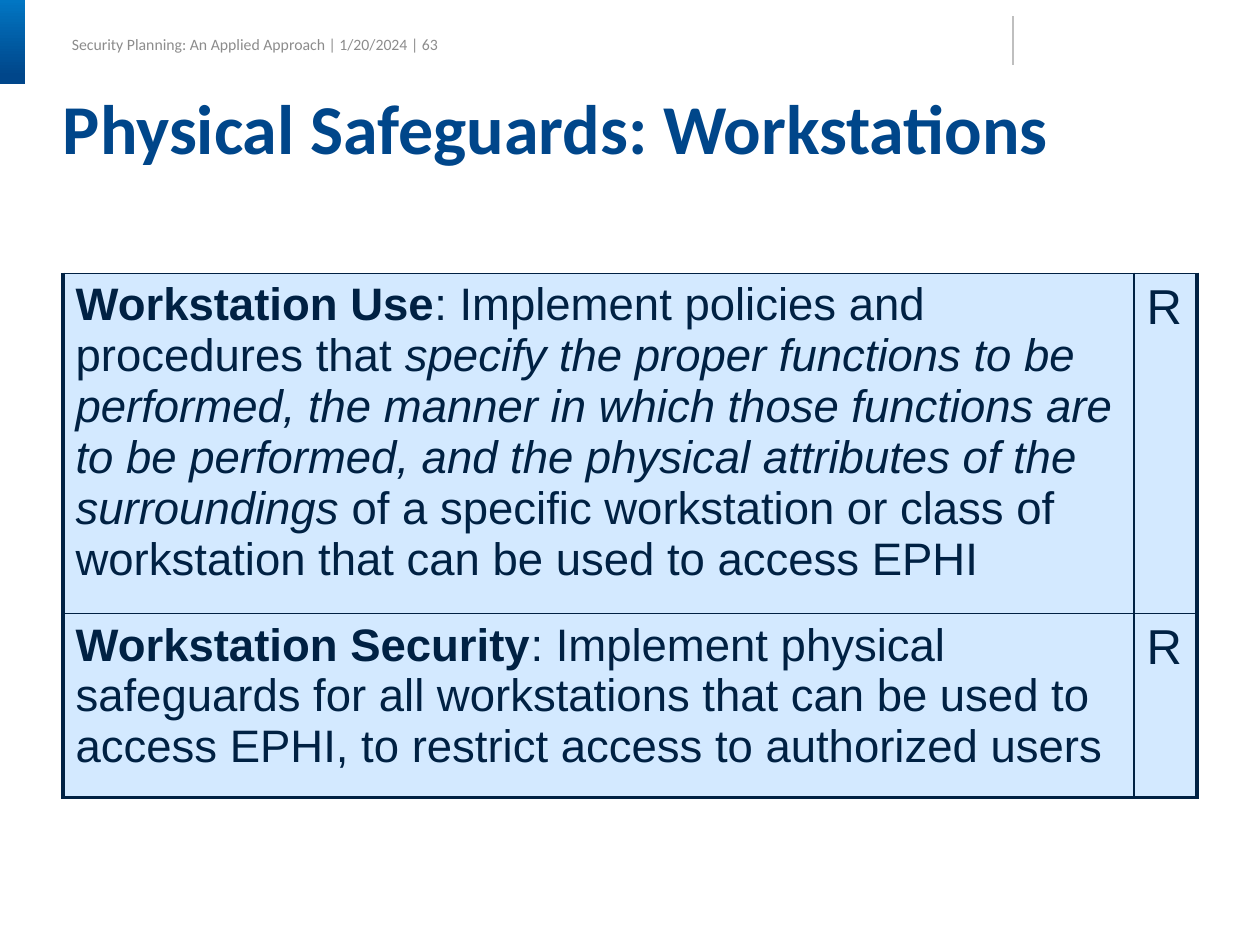
from lxml.etree import SubElement
from pptx import Presentation
from pptx.dml.color import RGBColor
from pptx.enum.shapes import MSO_CONNECTOR, MSO_SHAPE
from pptx.enum.text import MSO_ANCHOR
from pptx.oxml.ns import qn
from pptx.util import Inches, Pt

NAVY, BLUE, PALE = "002143", "00468A", "D3E9FF"


def color(value):
    return RGBColor.from_string(value)


def add_run(paragraph, text, size, font="Arial", fill=NAVY, bold=False, italic=False):
    run = paragraph.add_run()
    run.text = text
    run.font.name, run.font.size = font, Pt(size)
    run.font.bold, run.font.italic = bold, italic
    run.font.color.rgb = color(fill)


presentation = Presentation()
presentation.slide_width, presentation.slide_height = Inches(10), Inches(7.5)
slide = presentation.slides.add_slide(presentation.slide_layouts[6])
shapes = slide.shapes

# Corner accent and header divider
accent = shapes.add_shape(MSO_SHAPE.RECTANGLE, 0, 0, Inches(0.2), Inches(0.67))
accent.shadow.inherit = False
accent.line.fill.background()
accent.fill.gradient()
accent.fill.gradient_angle = 270
for stop, position, value in zip(accent.fill.gradient_stops, (0, 0.9), ("0176C3", BLUE)):
    stop.position = position
    stop.color.rgb = color(value)

divider = shapes.add_connector(
    MSO_CONNECTOR.STRAIGHT, Inches(8.04), Inches(0.13), Inches(8.04), Inches(0.52)
)
divider.line.color.rgb = color("BFBFBF")
divider.line.width = Pt(0.75)
SubElement(divider._element.spPr, qn("a:effectLst"))

# Header and title
texts = [
    ("Security Planning: An Applied Approach | 1/20/2024 | 63",
     (0.57, 0.24, 2.95, 0.23), MSO_ANCHOR.MIDDLE, False, 1,
     dict(size=9, fill="8C8C8C")),
    ("Physical Safeguards: Workstations",
     (0.5, 0.75, 9, 1.25), MSO_ANCHOR.TOP, True, 0.9,
     dict(size=40, fill=BLUE, bold=True)),
]
for text, box, anchor, wrap, spacing, style in texts:
    frame = shapes.add_textbox(*map(Inches, box)).text_frame
    frame.margin_left = frame.margin_top = frame.margin_right = frame.margin_bottom = 0
    frame.word_wrap, frame.vertical_anchor = wrap, anchor
    paragraph = frame.paragraphs[0]
    paragraph.line_spacing = spacing
    add_run(paragraph, text, font="Calibri", **style)

# Safeguards table: each row holds styled runs and its requirement mark
rows = [
    (2.7, [
        ("Workstation Use", dict(bold=True)),
        (": Implement policies and procedures that ", {}),
        ("specify the proper functions to be performed, the manner in which those "
         "functions are to be performed, and the physical attributes of the "
         "surroundings", dict(italic=True)),
        (" of a specific workstation or class of workstation that can be used to "
         "access EPHI", {}),
    ]),
    (1.46, [
        ("Workstation Security", dict(bold=True)),
        (": Implement physical safeguards for all workstations that can be used to "
         "access EPHI, to restrict access to authorized users", {}),
    ]),
]
table = shapes.add_table(2, 2, Inches(0.5), Inches(2.17), Inches(9), Inches(4.16)).table
table.first_row = table.horz_banding = False
for column, width in zip(table.columns, (8.5, 0.5)):
    column.width = Inches(width)

for row_index, (height, runs) in enumerate(rows):
    table.rows[row_index].height = Inches(height)
    for column_index in range(2):
        cell = table.cell(row_index, column_index)
        paragraph = cell.text_frame.paragraphs[0]
        if column_index == 0:
            for text, style in runs:
                add_run(paragraph, text, 26, **style)
        else:
            add_run(paragraph, "R", 28)

        # Borders come before the fill; outer sides and bottom are heavier
        properties = cell._tc.get_or_add_tcPr()
        heavy = {"lnL": column_index == 0, "lnR": column_index == 1,
                 "lnT": False, "lnB": row_index == 1}
        for side, is_heavy in heavy.items():
            border = SubElement(properties, qn(f"a:{side}"), w=str(Pt(2.25 if is_heavy else 1)))
            SubElement(SubElement(border, qn("a:solidFill")), qn("a:srgbClr"), val=NAVY)
        cell.fill.solid()
        cell.fill.fore_color.rgb = color(PALE)

presentation.save("out.pptx")
